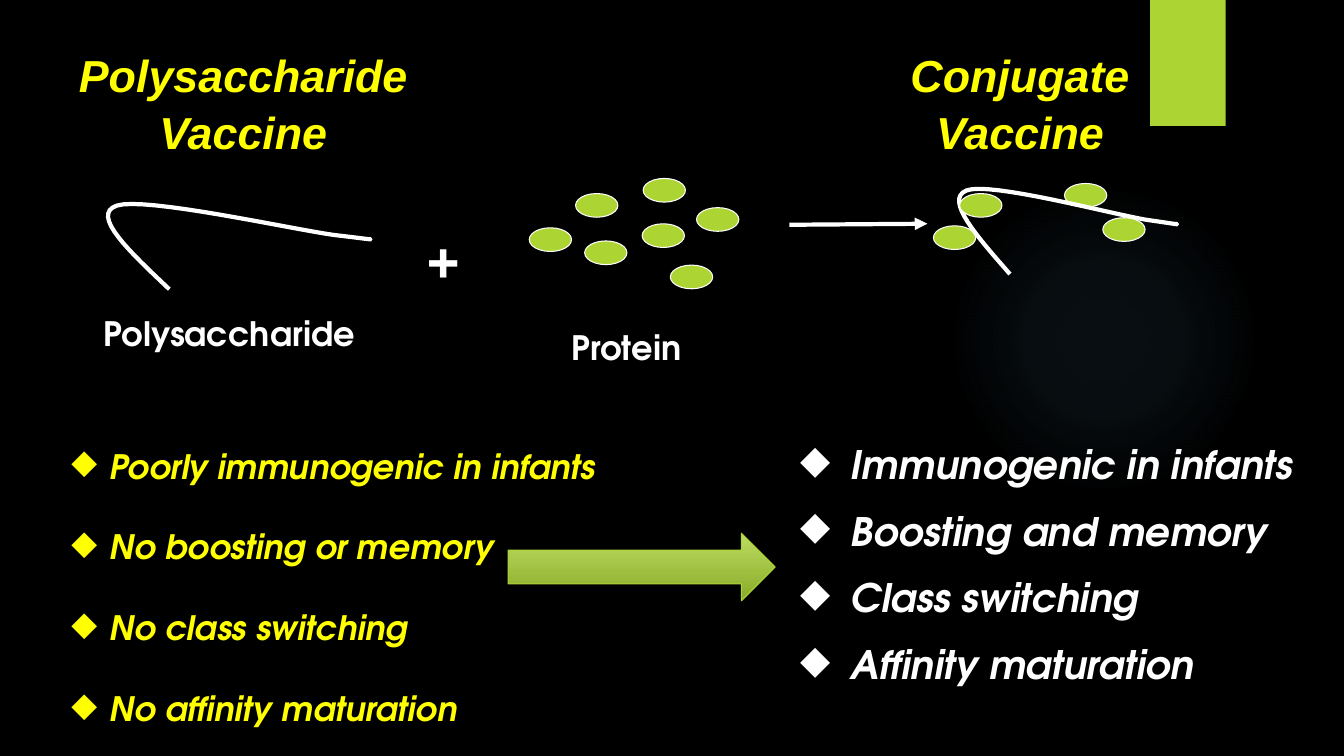
from dataclasses import dataclass

from lxml import etree
from pptx import Presentation
from pptx.dml.color import RGBColor
from pptx.enum.shapes import MSO_CONNECTOR, MSO_SHAPE
from pptx.enum.text import MSO_ANCHOR, MSO_AUTO_SIZE, PP_ALIGN
from pptx.oxml import parse_xml
from pptx.oxml.ns import nsdecls, qn
from pptx.util import Inches, Pt

OVAL, BAR, BLOCK_ARROW = MSO_SHAPE.OVAL, MSO_SHAPE.RECTANGLE, MSO_SHAPE.RIGHT_ARROW
STRAIGHT = MSO_CONNECTOR.STRAIGHT
CENTER, LEFT = PP_ALIGN.CENTER, PP_ALIGN.LEFT
TOP, MIDDLE = MSO_ANCHOR.TOP, MSO_ANCHOR.MIDDLE
NO_FIT = MSO_AUTO_SIZE.NONE
COLUMNS, ROWS = 133.33, 75
CELL = Inches(0.1)


@dataclass(frozen=True)
class Theme:
    background: str = "000000"
    accent: str = "ACD433"
    arrow_top: str = "BCDC62"
    arrow_bottom: str = "8AAA29"
    glow: str = "7AC4F0"
    plain: str = "FFFFFF"
    highlight: str = "FFFF00"
    heading_font: str = "Arial"
    body_font: str = "TeX Gyre Adventor"
    heading_size: int = 32
    plus_size: int = 36
    gain_size: int = 28
    body_size: int = 24
    stroke: float = 3
    outline: float = 0.75


def cells(*counts):
    return [round(count * CELL) for count in counts]


class VaccineSlide:
    """Draws themed elements on a title-only slide laid out in grid cells."""

    def __init__(self, deck, theme):
        self.theme = theme
        self.slide = deck.slides.add_slide(deck.slide_layouts[5])
        self.shapes = self.slide.shapes
        backdrop = self.slide.background.fill
        backdrop.solid()
        backdrop.fore_color.rgb = RGBColor.from_string(theme.background)

    def set_lines(self, frame, lines, size, color, font, italic, align=LEFT, anchor=TOP):
        frame.text = "\n".join(lines)
        frame.auto_size = NO_FIT
        frame.vertical_anchor = anchor
        for paragraph in frame.paragraphs:
            paragraph.alignment = align
            for run in paragraph.runs:
                run.font.name, run.font.size = font, Pt(size)
                run.font.bold, run.font.italic = True, italic
                run.font.color.rgb = RGBColor.from_string(color)

    def style_heading(self, frame, lines, anchor):
        frame.word_wrap = True
        theme = self.theme
        self.set_lines(frame, lines, theme.heading_size, theme.highlight,
                       theme.heading_font, True, CENTER, anchor)
        for paragraph in frame.paragraphs:
            paragraph.line_spacing = 1.05

    def title(self, area, text):
        heading = self.shapes.title
        heading.left, heading.top, heading.width, heading.height = cells(*area)
        self.style_heading(heading.text_frame, [text], MIDDLE)

    def heading(self, area, lines):
        frame = self.shapes.add_textbox(*cells(*area)).text_frame
        self.style_heading(frame, lines, TOP)

    def label(self, area, text, size):
        frame = self.shapes.add_textbox(*cells(*area)).text_frame
        frame.word_wrap = False
        self.set_lines(frame, [text], size, self.theme.plain, self.theme.body_font, False)

    def bullets(self, area, lines, size, color, margin, hanging, gap):
        frame = self.shapes.add_textbox(*cells(*area)).text_frame
        frame.word_wrap = True
        self.set_lines(frame, lines, size, color, self.theme.body_font, True)
        for index, paragraph in enumerate(frame.paragraphs):
            properties = paragraph._p.get_or_add_pPr()
            properties.set("marL", str(Inches(margin)))
            properties.set("indent", str(-Inches(hanging)))
            etree.SubElement(properties, qn("a:buChar")).set("char", "◆")
            paragraph.space_before = Pt(gap if index else 0)

    def shape(self, kind, area, fill=None, line=None):
        item = self.shapes.add_shape(kind, *cells(*area))
        item.shadow.inherit = False
        if fill:
            item.fill.solid()
            item.fill.fore_color.rgb = RGBColor.from_string(fill)
        if line:
            item.line.color.rgb = RGBColor.from_string(line)
            item.line.width = Pt(self.theme.outline)
        else:
            item.line.fill.background()
        return item

    def gradient(self, item, stops, direction):
        marks = "".join(
            f'<a:gs pos="{pos * 1000}"><a:srgbClr val="{color}">'
            f'<a:alpha val="{alpha * 1000}"/></a:srgbClr></a:gs>'
            for pos, color, alpha in stops)
        item._element.spPr.find(qn("a:prstGeom")).addnext(parse_xml(
            f'<a:gradFill {nsdecls("a")} rotWithShape="1">'
            f'<a:gsLst>{marks}</a:gsLst>{direction}</a:gradFill>'))

    def cast_shadow(self, item):
        item._element.spPr.find(qn("a:effectLst")).append(parse_xml(
            f'<a:outerShdw {nsdecls("a")} blurRad="{Pt(3)}" dist="{Pt(2)}" dir="5400000" '
            'rotWithShape="0"><a:srgbClr val="000000"><a:alpha val="45000"/>'
            '</a:srgbClr></a:outerShdw>'))

    def glow(self, area):
        color = self.theme.glow
        self.gradient(self.shape(OVAL, area), [(0, color, 7), (36, color, 6), (69, color, 0)],
                      '<a:path path="circle"><a:fillToRect l="50000" t="50000" '
                      'r="50000" b="50000"/></a:path>')

    def tab(self, area):
        self.cast_shadow(self.shape(BAR, area, self.theme.accent))

    def block_arrow(self, area):
        theme = self.theme
        arrow = self.shape(BLOCK_ARROW, area, line=theme.accent)
        self.gradient(arrow, [(0, theme.arrow_top, 100), (100, theme.arrow_bottom, 100)],
                      '<a:lin ang="5400000" scaled="0"/>')
        self.cast_shadow(arrow)

    def proteins(self, corners):
        for left, top in corners:
            self.shape(OVAL, (left, top, 4.2, 2.35), self.theme.accent, self.theme.plain)

    def strand(self, left, top, stretch=1.0, steps=16):
        bends = [(0, 0), (-3.9, -3.7), (-7.9, -7.4), (-5.2, -8.3), (-2.5, -9.2),
                 (12, -6), (16.2, -5.4), (20.4, -4.9), (20.1, -4.9), (19.8, -5)]
        points = []
        for first in range(0, len(bends) - 1, 3):
            for step in range(1, steps + 1):
                t = step / steps
                weights = ((1 - t) ** 3, 3 * t * (1 - t) ** 2, 3 * t * t * (1 - t), t ** 3)
                x, y = (sum(w * bend[axis] for w, bend in zip(weights, bends[first:first + 4]))
                        for axis in (0, 1))
                points.append(cells(left + x * stretch, top + y))
        builder = self.shapes.build_freeform(*cells(left, top))
        builder.add_line_segments(points, close=False)
        curve = builder.convert_to_shape()
        curve.shadow.inherit = False
        curve.fill.background()
        curve.line.color.rgb = RGBColor.from_string(self.theme.plain)
        curve.line.width = Pt(self.theme.stroke)

    def arrow(self, start, end):
        link = self.shapes.add_connector(STRAIGHT, *cells(*start, *end))
        link.line.color.rgb = RGBColor.from_string(self.theme.plain)
        link.line.width = Pt(self.theme.stroke)
        etree.SubElement(link.line._get_or_add_ln(), qn("a:tailEnd")).set("type", "triangle")
        etree.SubElement(link._element.spPr, qn("a:effectLst"))


def main():
    deck = Presentation()
    deck.slide_width, deck.slide_height = cells(COLUMNS, ROWS)
    theme = Theme()
    page = VaccineSlide(deck, theme)

    page.glow((94.1, 18.3, 30.8, 30.8))
    page.tab((114.1, 0, 7.5, 12.5))
    page.title((6.2, 4, 35.9, 12.2), "Polysaccharide Vaccine")
    page.heading((80.1, 4, 42.2, 11.8), ["Conjugate", "Vaccine"])

    page.strand(16.8, 28.7)
    page.label((9.3, 30.6, 27.3, 5), "Polysaccharide", theme.body_size)
    page.label((41.2, 21.9, 6.1, 7.1), "+", theme.plus_size)
    page.proteins([(58, 23.9), (66.5, 26.3), (57.1, 19.2), (63.8, 17.7),
                   (63.7, 22.2), (69.1, 20.6), (52.5, 22.6)])
    page.label((55.7, 31.9, 13.1, 5.1), "Protein", theme.body_size)
    page.arrow((78.3, 22.3), (92, 22.2))
    page.proteins([(105.6, 18.2), (92.6, 22.4)])
    page.strand(100.2, 27.2, stretch=0.83)
    page.proteins([(95.2, 19.2), (109.4, 21.6)])

    page.bullets((1.1, 43.7, 66.7, 29.3),
                 ["Poorly immunogenic in infants", "No boosting or memory",
                  "No class switching", "No affinity maturation"],
                 theme.body_size, theme.highlight, margin=0.88, hanging=0.38, gap=29)
    page.bullets((78.4, 43.2, 53.5, 26.9),
                 ["Immunogenic in infants", "Boosting and memory",
                  "Class switching", "Affinity maturation"],
                 theme.gain_size, theme.plain, margin=0.5, hanging=0.5, gap=14)
    page.block_arrow((50.4, 52.9, 26.5, 6.7))
    deck.save("out.pptx")


if __name__ == "__main__":
    main()
